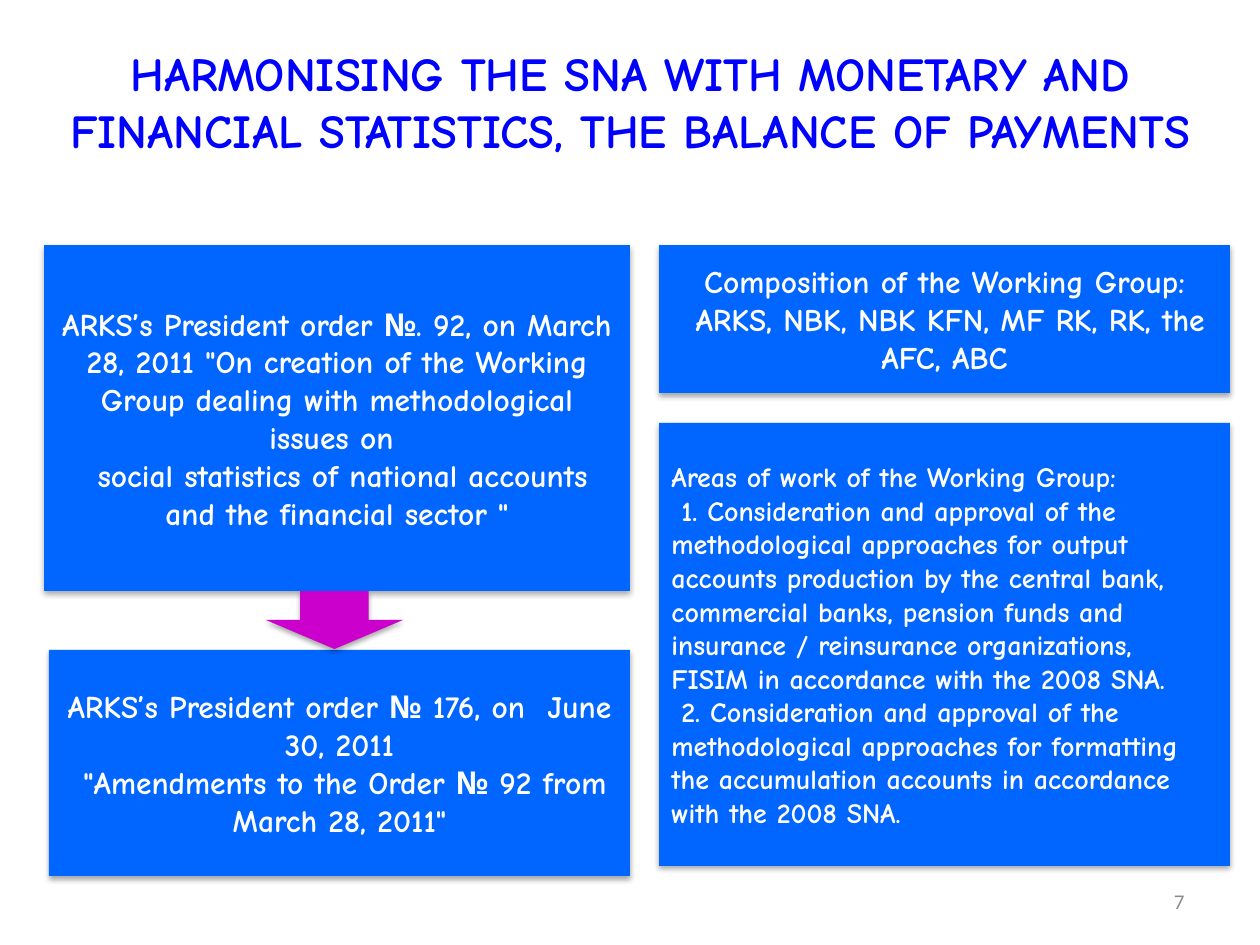
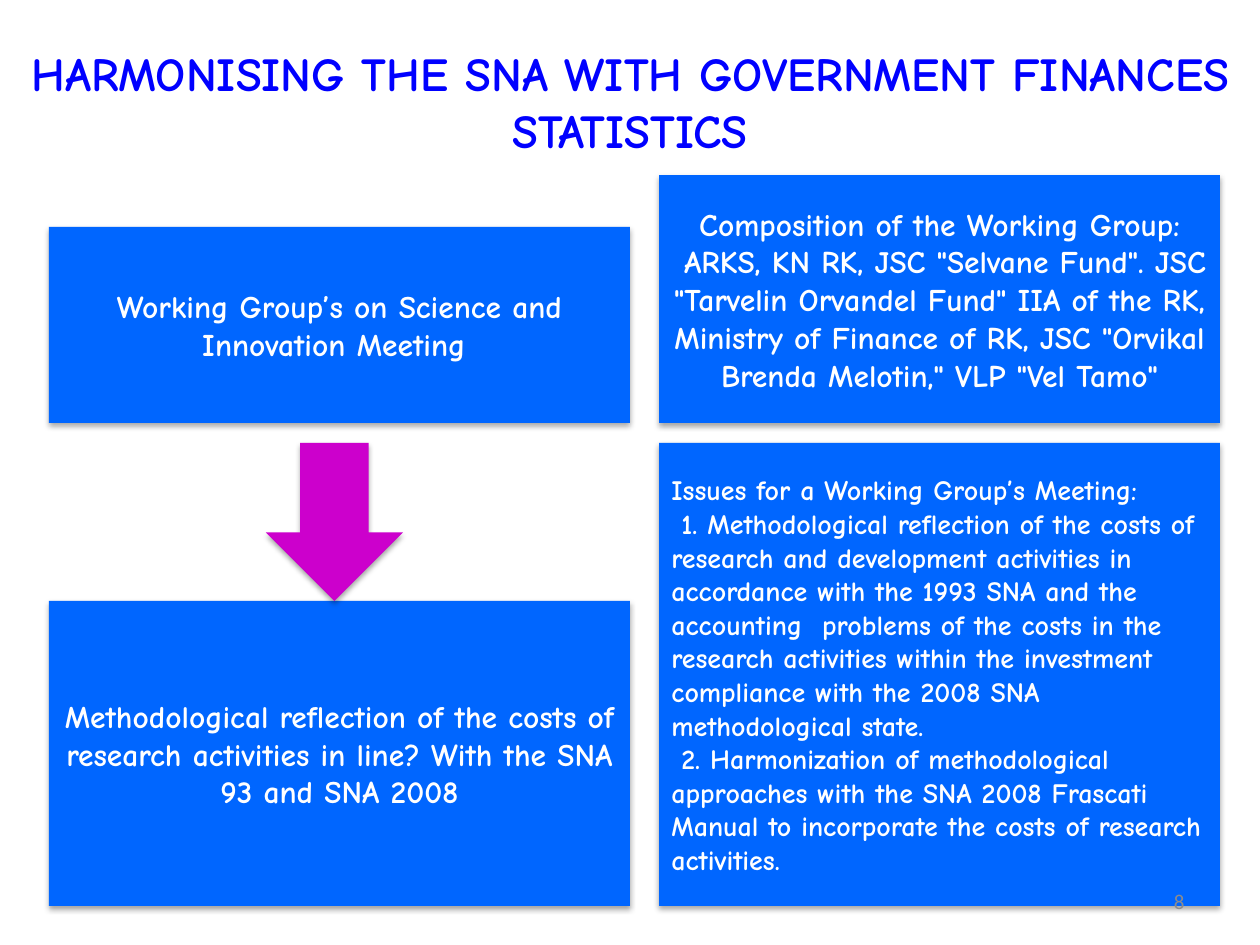
from lxml.etree import SubElement
from pptx import Presentation
from pptx.dml.color import RGBColor
from pptx.enum.shapes import MSO_SHAPE
from pptx.enum.text import MSO_ANCHOR, MSO_AUTO_SIZE, PP_ALIGN
from pptx.oxml.ns import qn
from pptx.util import Emu, Pt


def px(*sizes):
    return [Emu(round(size * 914400 / 126)) for size in sizes]


def write(frame, lines, color, align, anchor, font):
    frame.word_wrap = True
    frame.auto_size = MSO_AUTO_SIZE.NONE
    frame.vertical_anchor = anchor
    frame.text = "\n".join(lines)
    for para in frame.paragraphs:
        para.alignment = align
        for run in para.runs:
            for key, value in font.items():
                setattr(run.font, key, value)
            run.font.color.rgb = RGBColor.from_string(color)


BLUE, PURPLE, WHITE = "0066FF", "CC00CC", "FFFFFF"
NAVY, GREY = "0000FF", "8C8C8C"
HEAD = {"name": "Comic Neue", "size": Pt(27), "bold": True}
BODY = {"name": "Comic Neue", "size": Pt(18), "bold": True}
LIST = {"name": "Comic Neue", "size": Pt(16), "bold": True}
FOOT = {"name": "Calibri", "size": Pt(12), "bold": False}
LEFT, CENTER, RIGHT = PP_ALIGN.LEFT, PP_ALIGN.CENTER, PP_ALIGN.RIGHT
TOP, MIDDLE = MSO_ANCHOR.TOP, MSO_ANCHOR.MIDDLE

pages = [
    {
        "title": "HARMONISING THE SNA WITH MONETARY AND FINANCIAL STATISTICS, THE BALANCE OF PAYMENTS",
        "number": "7",
        "arrow": (266, 591, 137, 58),
        "boxes": [
            ((44, 245, 586, 346), CENTER, BODY, [
                "ARKS’s President order №. 92, on March 28, 2011 \"On creation of the Working Group dealing with methodological issues on ",
                " social statistics of national accounts and the financial sector \"",
            ]),
            ((49, 650, 581, 226), CENTER, BODY, [
                "ARKS’s President order № 176, on  June 30, 2011",
                " \"Amendments to the Order № 92 from March 28, 2011\"",
            ]),
            ((659, 245, 571, 148), CENTER, BODY, [
                "Composition of the Working Group:",
                " ARKS, NBK, NBK KFN, MF RK, RK, the AFC, ABC",
            ]),
            ((659, 423, 571, 443), LEFT, LIST, [
                "Areas of work of the Working Group:",
                " 1. Consideration and approval of the methodological approaches for output accounts production by the central bank, commercial banks, pension funds and insurance / reinsurance organizations, FISIM in accordance with the 2008 SNA.",
                " 2. Consideration and approval of the methodological approaches for formatting the accumulation accounts in accordance with the 2008 SNA.",
            ]),
        ],
    },
    {
        "title": "HARMONISING THE SNA WITH GOVERNMENT FINANCES STATISTICS",
        "number": "8",
        "arrow": (266, 443, 137, 158),
        "boxes": [
            ((49, 227, 581, 196), CENTER, BODY, [
                "Working Group’s on Science and Innovation Meeting ",
            ]),
            ((49, 601, 581, 305), CENTER, BODY, [
                "Methodological reflection of the costs of research activities in line? With the SNA 93 and SNA 2008",
            ]),
            ((659, 175, 561, 248), CENTER, BODY, [
                "Composition of the Working Group:",
                " ARKS, KN RK, JSC \"Selvane Fund\". JSC \"Tarvelin Orvandel Fund\" IIA of the RK, Ministry of Finance of RK, JSC \"Orvikal Brenda Melotin,\" VLP \"Vel Tamo\"",
            ]),
            ((659, 443, 561, 463), LEFT, LIST, [
                "Issues for a Working Group’s Meeting:",
                " 1. Methodological reflection of the costs of research and development activities in accordance with the 1993 SNA and the accounting  problems of the costs in the research activities within the investment compliance with the 2008 SNA methodological state.",
                " 2. Harmonization of methodological approaches with the SNA 2008 Frascati Manual to incorporate the costs of research activities.",
            ]),
        ],
    },
]

deck = Presentation()
deck.slide_width, deck.slide_height = px(1260, 945)

for page in pages:
    slide = deck.slides.add_slide(deck.slide_layouts[5])
    title = slide.shapes.title
    title.left, title.top, title.width, title.height = px(0, 38, 1260, 157)
    write(title.text_frame, [page["title"]], NAVY, CENTER, TOP, HEAD)

    blocks = [(MSO_SHAPE.RECTANGLE, BLUE, *box) for box in page["boxes"]]
    blocks.insert(3, (MSO_SHAPE.DOWN_ARROW, PURPLE, page["arrow"], CENTER, BODY, []))
    for kind, color, area, align, font, lines in blocks:
        shape = slide.shapes.add_shape(kind, *px(*area))
        shape.fill.solid()
        shape.fill.fore_color.rgb = RGBColor.from_string(color)
        shape.line.fill.background()
        shape.shadow.inherit = False
        effect = shape.element.spPr.find(qn("a:effectLst"))
        shade = SubElement(effect, qn("a:outerShdw"), blurRad="40000",
                           dist="23000", dir="5400000", rotWithShape="0")
        tint = SubElement(shade, qn("a:srgbClr"), val="000000")
        SubElement(tint, qn("a:alpha"), val="35000")
        write(shape.text_frame, lines, WHITE, align, MIDDLE, font)

    foot = slide.shapes.add_textbox(*px(903, 876, 294, 50))
    write(foot.text_frame, [page["number"]], GREY, RIGHT, MIDDLE, FOOT)

deck.save("out.pptx")
